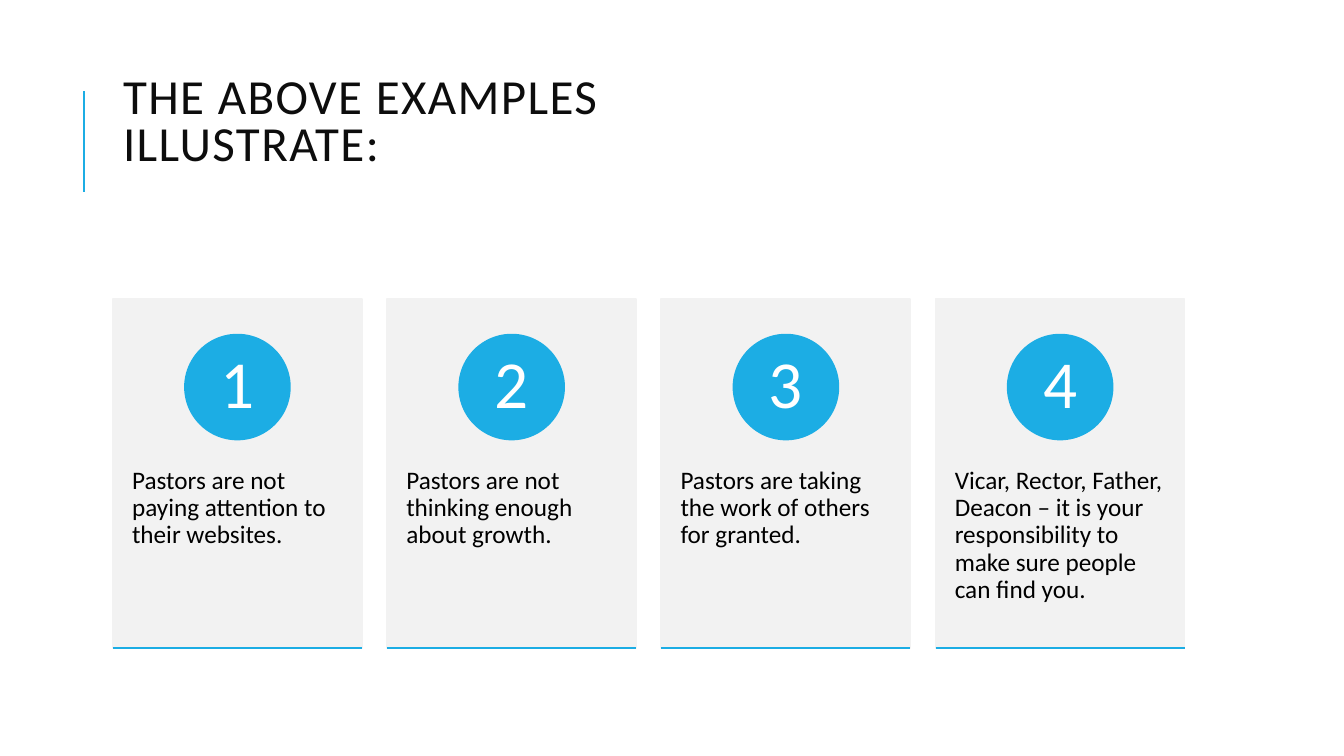
from lxml import etree
from pptx import Presentation
from pptx.dml.color import RGBColor
from pptx.enum.shapes import MSO_CONNECTOR, MSO_SHAPE
from pptx.enum.text import MSO_ANCHOR, MSO_AUTO_SIZE, PP_ALIGN
from pptx.oxml.ns import qn
from pptx.util import Inches, Pt

RECTANGLE, OVAL = MSO_SHAPE.RECTANGLE, MSO_SHAPE.OVAL
STRAIGHT = MSO_CONNECTOR.STRAIGHT
TOP, MIDDLE = MSO_ANCHOR.TOP, MSO_ANCHOR.MIDDLE
LEFT, CENTER = PP_ALIGN.LEFT, PP_ALIGN.CENTER
NO_FIT = MSO_AUTO_SIZE.NONE

BLUE = RGBColor(0x1C, 0xAD, 0xE4)
GRAY = RGBColor(0xF2, 0xF2, 0xF2)
INK = RGBColor(0x0D, 0x0D, 0x0D)
BLACK = RGBColor(0, 0, 0)
WHITE = RGBColor(0xFF, 0xFF, 0xFF)

# Grid of cards, in inches
MARGIN, COLUMN, PITCH = 1.12, 2.47, 2.72
CARD_TOP, CARD_HEIGHT = 2.97, 3.46
CIRCLE = 1.04

TITLE = ["THE ABOVE EXAMPLES", "ILLUSTRATE:"]
POINTS = [
    "Pastors are not paying attention to their websites.",
    "Pastors are not thinking enough about growth.",
    "Pastors are taking the work of others for granted.",
    "Vicar, Rector, Father, Deacon – it is your responsibility "
    "to make sure people can find you.",
]


class SlideBuilder:
    font = "Calibri"

    def __init__(self, deck):
        self.page = deck.slides.add_slide(deck.slide_layouts[5])

    def column_left(self, column):
        return MARGIN + column * PITCH

    def fill_text(self, box, lines, size, color, align=LEFT, anchor=TOP,
                  insets=(0.1, 0.05, 0.1, 0.05), spacing=0.9, tracking=0):
        frame = box.text_frame
        frame.word_wrap = True
        frame.auto_size = NO_FIT
        frame.vertical_anchor = anchor
        (frame.margin_left, frame.margin_top,
         frame.margin_right, frame.margin_bottom) = map(Inches, insets)
        para = frame.paragraphs[0]
        para.alignment = align
        para.line_spacing = spacing
        for index, line in enumerate(lines):
            if index:
                para.add_line_break()
            span = para.add_run()
            span.text = line
            span.font.name = self.font
            span.font.size = Pt(size)
            span.font.color.rgb = color
            if tracking:
                span.font._element.set("spc", str(tracking * 100))

    def title(self, lines):
        box = self.page.shapes.title
        box.left, box.top = Inches(MARGIN), Inches(0.64)
        box.width, box.height = Inches(10.63), Inches(1.64)
        # The deep bottom inset lifts the title above the box's middle
        self.fill_text(box, lines, 35, INK, anchor=MIDDLE,
                       insets=(0.1, 0.05, 0.1, 0.52), spacing=0.8, tracking=1)

    def shape(self, kind, left, top, width, height, color):
        shape = self.page.shapes.add_shape(
            kind, *map(Inches, (left, top, width, height)))
        shape.shadow.inherit = False
        shape.fill.solid()
        shape.fill.fore_color.rgb = color
        shape.line.color.rgb = color
        shape.line.width = Pt(1.25)
        return shape

    def line(self, x1, y1, x2, y2, width):
        line = self.page.shapes.add_connector(
            STRAIGHT, *map(Inches, (x1, y1, x2, y2)))
        line.line.color.rgb = BLUE
        line.line.width = Pt(width)
        etree.SubElement(line._element.spPr, qn("a:effectLst"))

    def text(self, left, top, width, height, content):
        box = self.page.shapes.add_textbox(
            *map(Inches, (left, top, width, height)))
        self.fill_text(box, [content], 18, BLACK,
                       insets=(0.19, 0.36, 0.19, 0.36))

    def card(self, column, content):
        left = self.column_left(column)
        bottom = CARD_TOP + CARD_HEIGHT
        self.shape(RECTANGLE, left, CARD_TOP, COLUMN, CARD_HEIGHT, GRAY)
        self.text(left, CARD_TOP + 1.31, COLUMN, 2.08, content)
        circle = self.shape(OVAL, left + (COLUMN - CIRCLE) / 2,
                            CARD_TOP + 0.35, CIRCLE, CIRCLE, BLUE)
        self.fill_text(circle, [str(column + 1)], 48, WHITE, CENTER, MIDDLE,
                       insets=(0.08, 0.01, 0.08, 0.01))
        self.line(left, bottom, left + COLUMN, bottom, 1.75)


def main():
    deck = Presentation()
    deck.slide_width, deck.slide_height = Inches(13.33), Inches(7.5)
    slide = SlideBuilder(deck)

    # Heading with its accent line
    slide.line(0.83, 1.9, 0.83, 0.9, 1.5)
    slide.title(TITLE)

    # Numbered cards
    for column, point in enumerate(POINTS):
        slide.card(column, point)

    deck.save("out.pptx")


if __name__ == "__main__":
    main()
